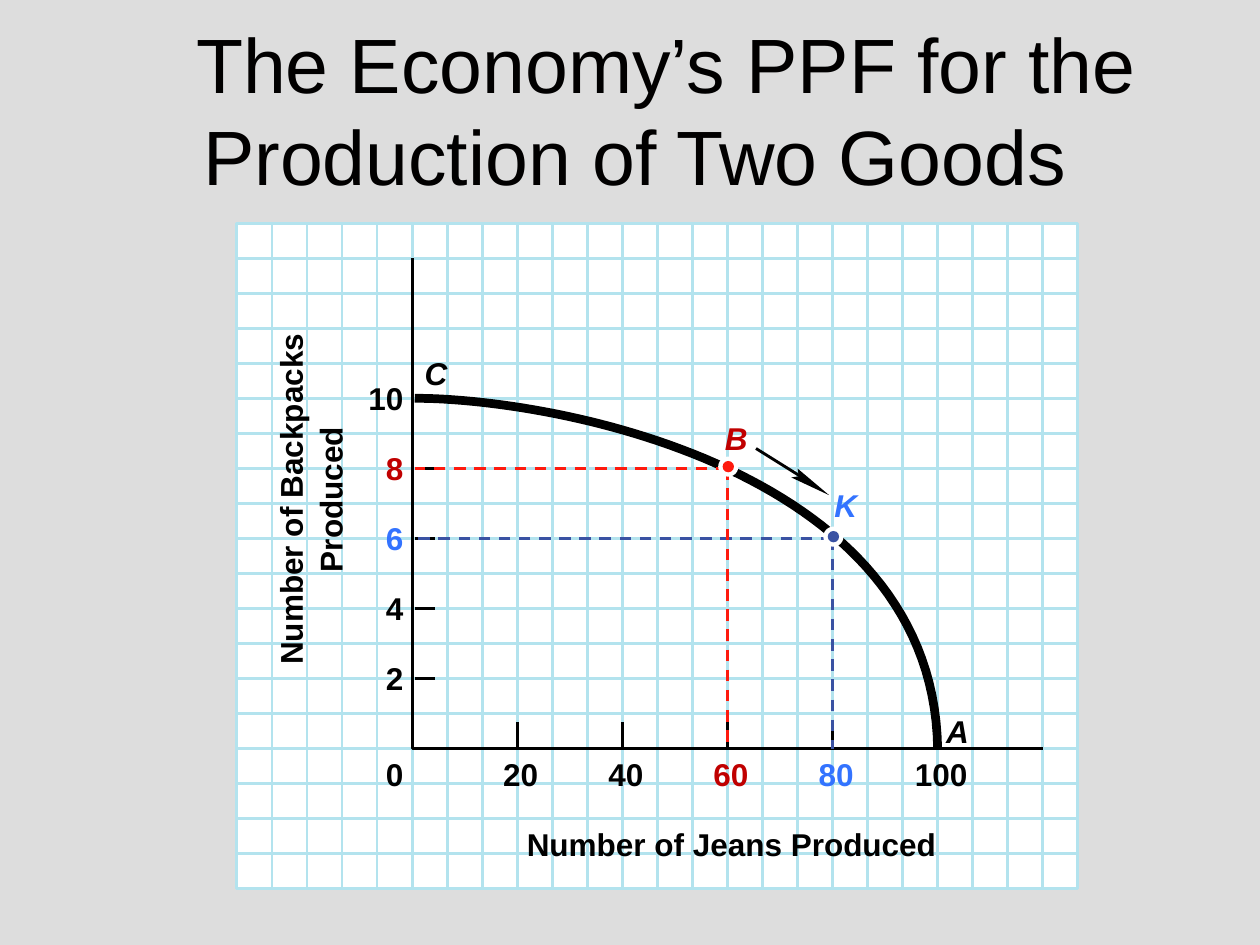
from pptx import Presentation
from pptx.dml.color import RGBColor
from pptx.enum.dml import MSO_LINE
from pptx.enum.shapes import MSO_CONNECTOR, MSO_SHAPE
from pptx.enum.text import MSO_ANCHOR, MSO_AUTO_SIZE, PP_ALIGN
from pptx.oxml.ns import qn
from pptx.util import Pt
from lxml import etree

STRAIGHT = MSO_CONNECTOR.STRAIGHT
RECTANGLE, OVAL = MSO_SHAPE.RECTANGLE, MSO_SHAPE.OVAL
DASH = MSO_LINE.DASH
CENTER, MIDDLE = PP_ALIGN.CENTER, MSO_ANCHOR.MIDDLE
NO_AUTOFIT = MSO_AUTO_SIZE.NONE

GRAY = RGBColor(0xDD, 0xDD, 0xDD)
WHITE = RGBColor(0xFF, 0xFF, 0xFF)
BLACK = RGBColor(0x00, 0x00, 0x00)
TITLE_BLACK = RGBColor(0x01, 0x00, 0x00)
GRID_BLUE = RGBColor(0xB3, 0xE3, 0xEE)
TEXT_RED = RGBColor(0xC0, 0x00, 0x00)
TEXT_BLUE = RGBColor(0x33, 0x73, 0xFF)
MARK_RED = RGBColor(0xFE, 0x1A, 0x0E)
MARK_BLUE = RGBColor(0x3A, 0x52, 0xA3)

FONT = "Arial"
THIN, THICK = 1.63, 5
CELL, COLUMNS, ROWS = 20.02, 24, 19
GRID_LEFT, GRID_TOP = 135.4, 127.5
GRID_RIGHT, GRID_BOTTOM = GRID_LEFT + COLUMNS * CELL, GRID_TOP + ROWS * CELL
ORIGIN_X, ORIGIN_Y = GRID_LEFT + 5 * CELL, GRID_TOP + 15 * CELL
AXIS_START = ORIGIN_X + 1.5
LABEL_TOP, LABEL_HEIGHT = 431.3, 21.6


def jeans_x(jeans):
    """Return the horizontal place of a number of jeans."""
    return ORIGIN_X + jeans * 3 * CELL / 20


def backpacks_y(backpacks):
    """Return the vertical place of a number of backpacks."""
    return ORIGIN_Y - backpacks * CELL


def add_line(slide, start, end, color=BLACK, dash=None):
    """Draw a thin straight line, dashed on request."""
    connector = slide.shapes.add_connector(STRAIGHT, *map(Pt, start + end))
    connector.line.color.rgb = color
    connector.line.width = Pt(THIN)
    if dash:
        connector.line.dash_style = dash
    etree.SubElement(connector._element.spPr, qn("a:effectLst"))


def add_plain_shape(slide, kind, left, top, width, height, fill=None, line=None):
    """Add a preset shape with the given fill and outline."""
    shape = slide.shapes.add_shape(kind, Pt(left), Pt(top), Pt(width), Pt(height))
    format_shape(shape, fill, line, THIN)


def add_outline(slide, points, fill=None, line=None, width=THIN):
    """Add a freeform through the points, closed when it is filled."""
    corners = [(Pt(x), Pt(y)) for x, y in points]
    builder = slide.shapes.build_freeform(*corners[0])
    builder.add_line_segments(corners[1:], close=fill is not None)
    format_shape(builder.convert_to_shape(), fill, line, width)


def format_shape(shape, fill, line, width):
    """Set fill and outline and drop the shadow."""
    shape.shadow.inherit = False
    if fill is None:
        shape.fill.background()
    else:
        shape.fill.solid()
        shape.fill.fore_color.rgb = fill
    if line is None:
        shape.line.fill.background()
    else:
        shape.line.color.rgb = line
        shape.line.width = Pt(width)


def add_label(slide, text, left, top, width, color=BLACK, italic=False, rotation=0):
    """Add a bold one-line label without margins."""
    box = slide.shapes.add_textbox(Pt(left), Pt(top), Pt(width), Pt(LABEL_HEIGHT))
    box.rotation = rotation
    frame = box.text_frame
    frame.word_wrap = False
    frame.margin_left = frame.margin_right = frame.margin_top = frame.margin_bottom = 0
    span = frame.paragraphs[0].add_run()
    span.text = text
    format_span(span, 18, color)
    span.font.bold = True
    span.font.italic = italic


def format_span(span, size, color):
    """Set the font, size and colour of a run."""
    span.font.name = FONT
    span.font.size = Pt(size)
    span.font.color.rgb = color


def add_title(slide):
    """Fill the title placeholder."""
    title = slide.shapes.title
    title.left, title.top, title.width, title.height = Pt(18), Pt(17.3), Pt(689.8), Pt(90)
    frame = title.text_frame
    frame.word_wrap = True
    frame.auto_size = NO_AUTOFIT
    frame.vertical_anchor = MIDDLE
    para = frame.paragraphs[0]
    para.alignment = CENTER
    properties = para._p.get_or_add_pPr()
    properties.set("marL", "0")
    properties.set("indent", str(Pt(36)))
    span = para.add_run()
    span.text = "The Economy’s PPF for the Production of Two Goods"
    format_span(span, 44, TITLE_BLACK)


def add_grid(slide):
    """Draw the squared paper."""
    area = (GRID_LEFT, GRID_TOP, GRID_RIGHT - GRID_LEFT, GRID_BOTTOM - GRID_TOP)
    add_plain_shape(slide, RECTANGLE, *area, fill=WHITE, line=GRID_BLUE)
    for row in range(1, ROWS):
        y = GRID_TOP + row * CELL
        add_line(slide, (GRID_LEFT, y), (GRID_RIGHT, y), GRID_BLUE)
    for column in range(1, COLUMNS):
        x = GRID_LEFT + column * CELL
        add_line(slide, (x, GRID_BOTTOM), (x, GRID_TOP), GRID_BLUE)


def add_axes(slide):
    """Draw both axes with their ticks, numbers and names."""
    add_outline(slide, [(ORIGIN_X, backpacks_y(14)), (ORIGIN_X, ORIGIN_Y),
                        (jeans_x(120), ORIGIN_Y)], line=BLACK)
    add_label(slide, "0", ORIGIN_X - 15, LABEL_TOP, 15)
    for jeans in range(20, 101, 20):
        x, digits = jeans_x(jeans), len(str(jeans))
        add_line(slide, (x, ORIGIN_Y - 15), (x, ORIGIN_Y))
        color = {60: TEXT_RED, 80: TEXT_BLUE}.get(jeans, BLACK)
        add_label(slide, str(jeans), x + 2 - 5 * digits, LABEL_TOP, 5 + 10 * digits, color)
    for backpacks in range(2, 11, 2):
        y, width = backpacks_y(backpacks), 5 + 10 * len(str(backpacks))
        add_line(slide, (AXIS_START + 11.5, y), (AXIS_START, y))
        color = {8: TEXT_RED, 6: TEXT_BLUE}.get(backpacks, BLACK)
        add_label(slide, str(backpacks), ORIGIN_X - width, y - 11, width, color)
    add_label(slide, "Number of Backpacks", 69.1, 272.2, 193.7, rotation=270)
    add_label(slide, "Produced", 144.7, 272.2, 87.8, rotation=270)
    add_label(slide, "Number of Jeans Produced", 301, 471.6, 239)


def add_frontier(slide):
    """Draw the frontier as a smooth curve between its two end points."""
    (x0, y0), (x1, y1), (x2, y2), (x3, y3) = (
        (AXIS_START, backpacks_y(10)), (316.8, backpacks_y(10)),
        (533.5, 267.8), (jeans_x(100), ORIGIN_Y))
    steps = 60
    points = []
    for step in range(steps + 1):
        t = step / steps
        weights = ((1 - t) ** 3, 3 * t * (1 - t) ** 2, 3 * t ** 2 * (1 - t), t ** 3)
        points.append((sum(w * x for w, x in zip(weights, (x0, x1, x2, x3))),
                       sum(w * y for w, y in zip(weights, (y0, y1, y2, y3)))))
    add_outline(slide, points, line=BLACK, width=THICK)
    add_label(slide, "A", 540.7, 406.8, 18, italic=True)
    add_label(slide, "C", 242.6, 202.3, 18, italic=True)


def add_marked_point(slide, name, jeans, backpacks, offset, color, text_color):
    """Mark a point on the frontier with guides, a dot and a name."""
    x, y = jeans_x(jeans), backpacks_y(backpacks)
    add_line(slide, (x, y), (x, ORIGIN_Y), color, DASH)
    add_line(slide, (x, y), (AXIS_START, y), color, DASH)
    for size, fill in ((11.5, WHITE), (6.5, color)):
        add_plain_shape(slide, OVAL, x + 0.5 - size / 2, y - 1 - size / 2, size, size, fill)
    add_label(slide, name, x + offset[0], y + offset[1], 18, text_color, italic=True)


def add_movement_arrow(slide):
    """Draw the barbed arrow that leads from B to K."""
    add_line(slide, (432, 256.3), (460.8, 274.3))
    add_outline(slide, [(455.8, 267.8), (473.8, 283), (452.2, 272.9), (456.5, 272.2)], fill=BLACK)


def main():
    """Build the slide and save it."""
    deck = Presentation()
    deck.slide_width, deck.slide_height = Pt(720), Pt(540)
    slide = deck.slides.add_slide(deck.slide_layouts[5])
    slide.background.fill.solid()
    slide.background.fill.fore_color.rgb = GRAY
    add_title(slide)
    add_grid(slide)
    add_axes(slide)
    add_movement_arrow(slide)
    add_frontier(slide)
    add_marked_point(slide, "K", 80, 6, (1, -30), MARK_BLUE, TEXT_BLUE)
    add_marked_point(slide, "B", 60, 8, (-1.5, -28), MARK_RED, TEXT_RED)
    deck.save("out.pptx")


if __name__ == "__main__":
    main()
